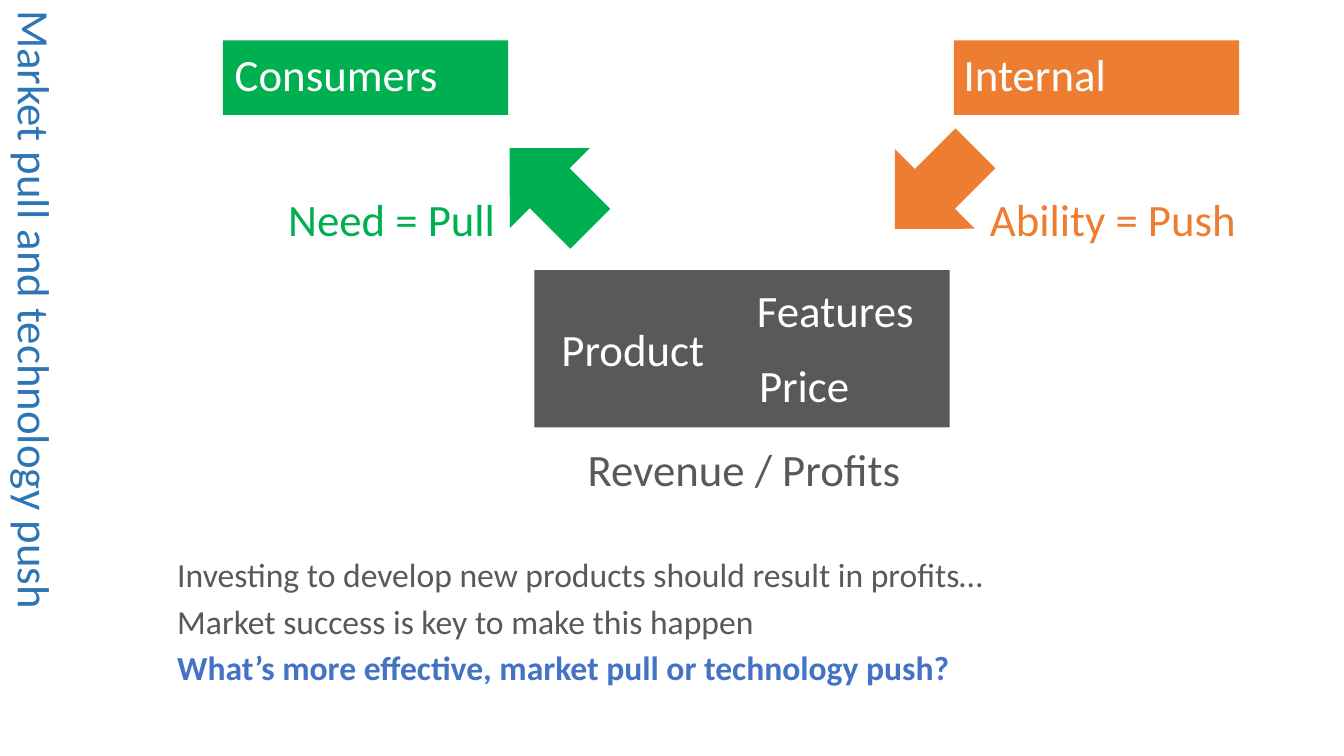
from dataclasses import dataclass

from pptx import Presentation
from pptx.dml.color import RGBColor
from pptx.enum.shapes import MSO_SHAPE
from pptx.enum.text import MSO_ANCHOR, MSO_AUTO_SIZE, PP_ALIGN
from pptx.util import Inches, Pt


@dataclass(frozen=True)
class Theme:
    font: str = "Calibri"
    title: str = "2E75B5"
    pull: str = "00B050"
    push: str = "ED7D31"
    grey: str = "595959"
    question: str = "4472C4"
    white: str = "FFFFFF"
    large: int = 32
    body: int = 24


theme = Theme()


def write(frame, text, *, color, size=theme.large, bold=False, spacing=1.0, before=0, new=False):
    paragraph = frame.add_paragraph() if new else frame.paragraphs[0]
    paragraph.alignment = PP_ALIGN.LEFT
    paragraph.line_spacing = spacing
    paragraph.space_before = Pt(before)
    run = paragraph.add_run()
    run.text = text
    run.font.name = theme.font
    run.font.size = Pt(size)
    run.font.bold = bold
    run.font.color.rgb = RGBColor.from_string(color)


def block(holder, preset, box, color, rotation=0):
    shape = holder.add_shape(preset, *map(Inches, box))
    shape.fill.solid()
    shape.fill.fore_color.rgb = RGBColor.from_string(color)
    shape.line.fill.background()
    shape.shadow.inherit = False
    shape.rotation = rotation
    return shape


presentation = Presentation()
presentation.slide_width = Inches(13.33)
presentation.slide_height = Inches(7.5)
slide = presentation.slides.add_slide(presentation.slide_layouts[5])
shapes = slide.shapes

heading = shapes.title
heading_length, heading_depth = 6.35, 0.92
heading_shift = (heading_length - heading_depth) / 2
heading.left, heading.top = Inches(-heading_shift), Inches(heading_shift)
heading.width, heading.height = Inches(heading_length), Inches(heading_depth)
heading.rotation = 90
heading_frame = heading.text_frame
heading_frame.word_wrap = True
heading_frame.auto_size = MSO_AUTO_SIZE.NONE
heading_frame.vertical_anchor = MSO_ANCHOR.BOTTOM
heading_frame.margin_left = heading_frame.margin_right = Inches(0.1)
heading_frame.margin_top = heading_frame.margin_bottom = Inches(0.08)
write(heading_frame, "Market pull and technology push", color=theme.title, spacing=0.9)

for left, color in [(2.21, theme.pull), (9.46, theme.push)]:
    block(shapes, MSO_SHAPE.RECTANGLE, (left, 0.4, 2.83, 0.74), color)

for left, rotation, color in [(4.89, 225, theme.pull), (8.71, 135, theme.push)]:
    block(shapes, MSO_SHAPE.RIGHT_ARROW, (left, 1.31, 1.13, 1.12), color, rotation)

offer = shapes.add_group_shape().shapes
block(offer, MSO_SHAPE.RECTANGLE, (5.3, 2.68, 4.12, 1.56), theme.grey)

labels = [
    (shapes, "Consumers", 2.23, 0.41, 2.23, theme.white),
    (shapes, "Internal", 9.46, 0.41, 1.63, theme.white),
    (shapes, "Need = Pull", 2.76, 1.85, 2.28, theme.pull),
    (shapes, "Ability = Push", 9.72, 1.85, 2.67, theme.push),
    (offer, "Product", 5.47, 3.14, 1.63, theme.white),
    (offer, "Features", 7.41, 2.76, 1.77, theme.white),
    (offer, "Price", 7.43, 3.5, 1.1, theme.white),
    (shapes, "Revenue / Profits", 5.73, 4.33, 3.34, theme.grey),
]
for holder, text, left, top, width, color in labels:
    label = holder.add_textbox(Inches(left), Inches(top), Inches(width), Inches(0.64))
    label.text_frame.word_wrap = False
    label.text_frame.auto_size = MSO_AUTO_SIZE.SHAPE_TO_FIT_TEXT
    write(label.text_frame, text, color=color)

summary = shapes.add_textbox(Inches(1.66), Inches(5.52), Inches(10.76), Inches(1.35)).text_frame
summary.word_wrap = True
summary.vertical_anchor = MSO_ANCHOR.MIDDLE
summary_lines = [
    ("Investing to develop new products should result in profits…", theme.grey, False),
    ("Market success is key to make this happen", theme.grey, False),
    ("What’s more effective, market pull or technology push?", theme.question, True),
]
for index, (text, color, bold) in enumerate(summary_lines):
    write(summary, text, color=color, size=theme.body, bold=bold,
          spacing=0.8, before=10, new=index > 0)

presentation.save("out.pptx")
